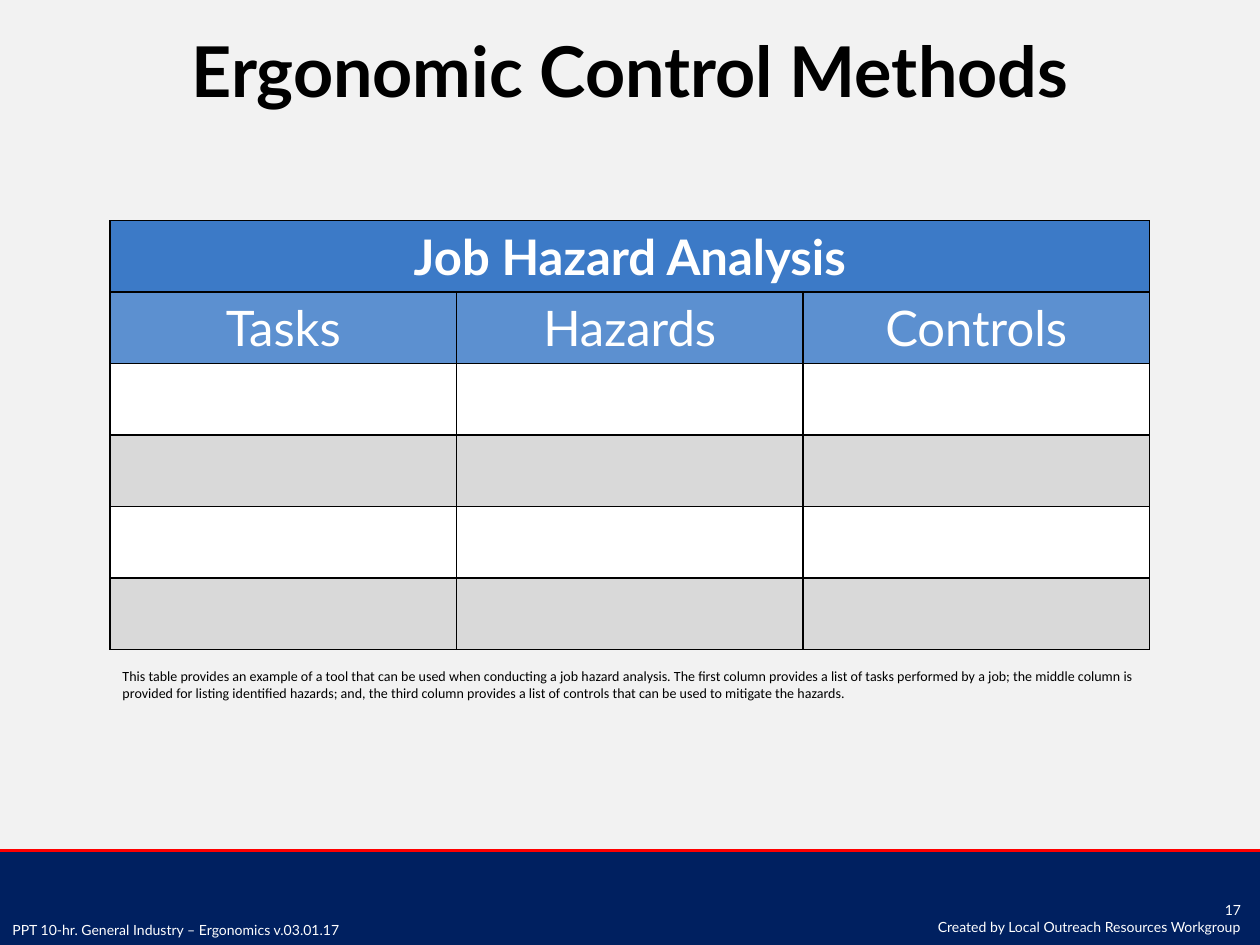
from lxml import etree
from pptx import Presentation
from pptx import util as u
from pptx.dml import color as c
from pptx.enum import shapes, text
from pptx.oxml import ns

COLORS = {
    "background": "F2F2F2",
    "footer": "002060",
    "rule": "FF0000",
    "heading": "3C7AC7",
    "subheading": "5C90D0",
    "light": "FFFFFF",
    "shade": "D9D9D9",
    "ink": "000000",
}


def rgb(name):
    return c.RGBColor.from_string(COLORS[name])


def write(tf, *lines, size=8, font="Lato", ink="light", bold=False, align="LEFT"):
    for i, line in enumerate(lines):
        p = tf.add_paragraph() if i else tf.paragraphs[0]
        p.alignment = getattr(text.PP_ALIGN, align)
        r = p.add_run()
        r.text = line
        r.font.size = u.Pt(size)
        r.font.name = font
        r.font.bold = bold
        r.font.color.rgb = rgb(ink)


class SlideBuilder:
    def __init__(self, prs):
        self.slide = prs.slides.add_slide(prs.slide_layouts[6])
        fill = self.slide.background.fill
        fill.solid()
        fill.fore_color.rgb = rgb("background")

    def rect(self, x, y, w, h, fill):
        sp = self.slide.shapes.add_shape(
            shapes.MSO_SHAPE.RECTANGLE, u.Cm(x), u.Cm(y), u.Cm(w), u.Cm(h))
        sp.shadow.inherit = False
        sp.fill.solid()
        sp.fill.fore_color.rgb = rgb(fill)
        sp.line.fill.background()

    def line(self, x1, y1, x2, y2, ink, width):
        cxn = self.slide.shapes.add_connector(
            shapes.MSO_CONNECTOR.STRAIGHT, u.Cm(x1), u.Cm(y1), u.Cm(x2), u.Cm(y2))
        cxn.line.color.rgb = rgb(ink)
        cxn.line.width = u.Pt(width)
        etree.SubElement(cxn._element.spPr, ns.qn("a:effectLst"))

    def text(self, x, y, w, h, *lines, anchor="TOP", **style):
        sp = self.slide.shapes.add_textbox(u.Cm(x), u.Cm(y), u.Cm(w), u.Cm(h))
        tf = sp.text_frame
        tf.word_wrap = True
        tf.vertical_anchor = getattr(text.MSO_ANCHOR, anchor)
        write(tf, *lines, **style)

    def border(self, cell, ink, width):
        tcPr = cell._tc.get_or_add_tcPr()
        for i, side in enumerate(("lnL", "lnR", "lnT", "lnB")):
            ln = etree.Element(ns.qn(f"a:{side}"), w=str(u.Pt(width)))
            fill = etree.SubElement(ln, ns.qn("a:solidFill"))
            etree.SubElement(fill, ns.qn("a:srgbClr"), val=COLORS[ink])
            tcPr.insert(i, ln)

    def table(self, x, y, w, h, title, headers, row_fills):
        tbl = self.slide.shapes.add_table(
            len(row_fills), len(headers), u.Cm(x), u.Cm(y), u.Cm(w), u.Cm(h)).table
        for row, fill in zip(tbl.rows, row_fills):
            row.height = u.Cm(h / len(row_fills))
            for cell in row.cells:
                cell.fill.solid()
                cell.fill.fore_color.rgb = rgb(fill)
                self.border(cell, "ink", 1)
        tbl.cell(0, 0).merge(tbl.cell(0, len(headers) - 1))
        write(tbl.cell(0, 0).text_frame, title, size=28, bold=True, align="CENTER")
        for col, header in enumerate(headers):
            write(tbl.cell(1, col).text_frame, header, size=28, align="CENTER")


def main():
    prs = Presentation()
    prs.slide_width, prs.slide_height = u.Cm(25.4), u.Cm(19.05)
    s = SlideBuilder(prs)
    s.rect(0, 17.15, 25.4, 1.9, "footer")
    s.line(0, 17.15, 25.4, 17.15, "rule", 2)
    s.text(0, 18.45, 7.82, 0.6, "PPT 10-hr. General Industry – Ergonomics v.03.01.17")
    s.text(17.45, 17.92, 7.82, 1.19, "17",
           "Created by Local Outreach Resources Workgroup",
           anchor="MIDDLE", align="RIGHT")
    s.table(2.22, 4.45, 20.95, 8.64, "Job Hazard Analysis",
            ["Tasks", "Hazards", "Controls"],
            ["heading", "subheading"] + ["light", "shade"] * 2)
    s.text(2.22, 13.34, 20.95, 0.94,
           "This table provides an example of a tool that can be used when "
           "conducting a job hazard analysis. The first column provides a list of "
           "tasks performed by a job; the middle column is provided for listing "
           "identified hazards; and, the third column provides a list of controls "
           "that can be used to mitigate the hazards.",
           font="Calibri", ink="ink")
    s.text(1.27, 0.43, 22.86, 3.18, "Ergonomic Control Methods",
           size=40, ink="ink", bold=True, align="CENTER")
    prs.save("out.pptx")


if __name__ == "__main__":
    main()
